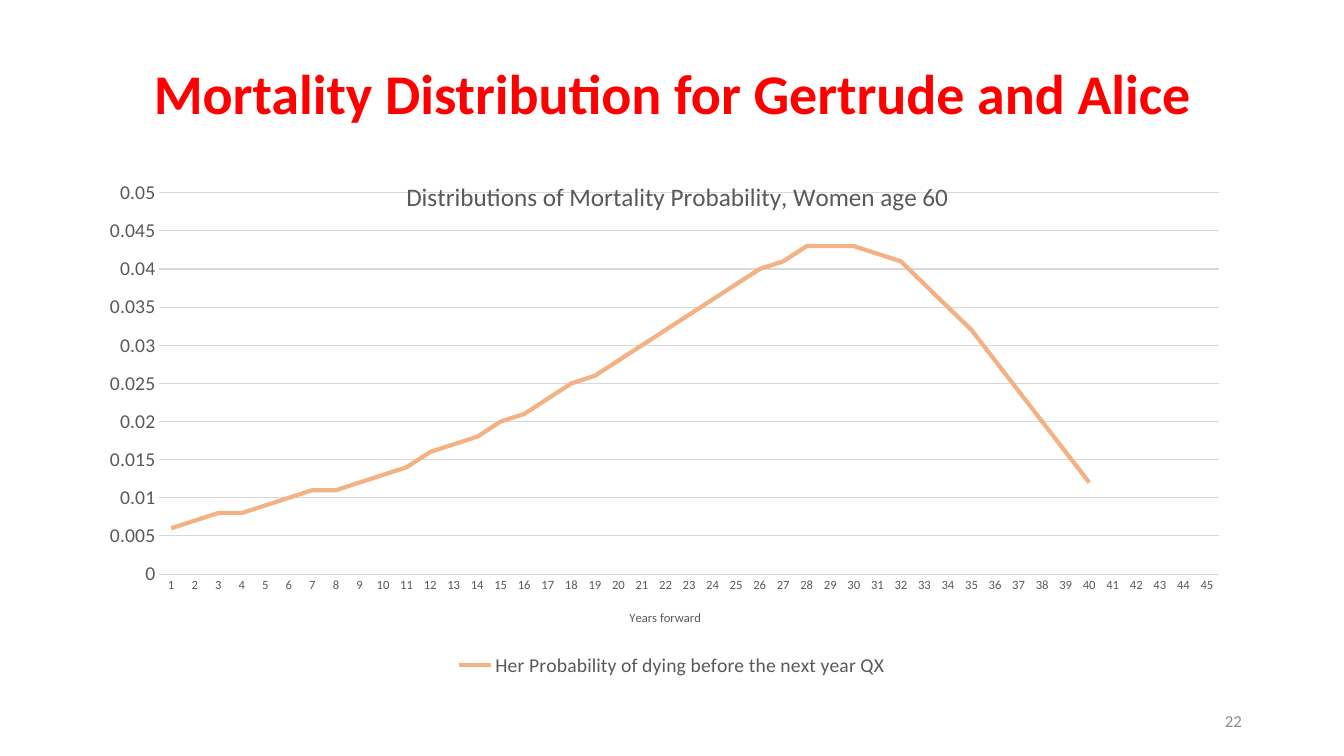
"""Build the mortality distribution slide with its line chart."""
from typing import NamedTuple, Union

from pptx import Presentation
from pptx.chart.axis import CategoryAxis, ValueAxis
from pptx.chart.data import CategoryChartData
from pptx.dml.color import RGBColor
from pptx.dml.line import LineFormat
from pptx.enum.chart import XL_CHART_TYPE, XL_LEGEND_POSITION, XL_MARKER_STYLE, XL_TICK_MARK
from pptx.enum.text import MSO_ANCHOR, MSO_AUTO_SIZE, PP_ALIGN
from pptx.oxml import parse_xml
from pptx.oxml.ns import nsdecls, qn
from pptx.text.text import Font, TextFrame
from pptx.util import Cm, Pt

COLORS = {
    "heading": "FF0000",
    "label": "595959",
    "grid": "D9D9D9",
    "curve": "F4B183",
    "page": "8C8C8C",
}
FONT = "Calibri"
YEARS = 45
PROBABILITIES = [
    0.006, 0.007, 0.008, 0.008, 0.009, 0.01, 0.011, 0.011, 0.012, 0.013,
    0.014, 0.016, 0.017, 0.018, 0.02, 0.021, 0.023, 0.025, 0.026, 0.028,
    0.03, 0.032, 0.034, 0.036, 0.038, 0.04, 0.041, 0.043, 0.043, 0.043,
    0.042, 0.041, 0.038, 0.035, 0.032, 0.028, 0.024, 0.02, 0.016, 0.012,
]


class Box(NamedTuple):
    """Left, top, width and height in centimetres."""

    left: float
    top: float
    width: float
    height: float

    def lengths(self) -> list[Cm]:
        """Return the four measures as slide lengths."""
        return [Cm(measure) for measure in self]


HEADING_BOX = Box(2.34, 1.02, 29.21, 2.84)
CHART_BOX = Box(2.74, 3.86, 28.4, 13.31)
PAGE_BOX = Box(23.93, 17.65, 7.62, 1.02)


def set_font(font: Font, size: float, color: str, bold: bool = False) -> None:
    """Apply the slide's typeface with a size and a colour."""
    font.name, font.size, font.bold = FONT, Pt(size), bold
    font.color.rgb = RGBColor.from_string(COLORS[color])


def write(frame: TextFrame, text: str, *, size: float, color: str, bold: bool = False,
          align: PP_ALIGN = PP_ALIGN.CENTER, spacing: float = 1.0) -> None:
    """Put one formatted paragraph in a text frame."""
    paragraph = frame.paragraphs[0]
    paragraph.alignment, paragraph.line_spacing = align, spacing
    run = paragraph.add_run()
    run.text = text
    set_font(run.font, size, color, bold)


def settle(frame: TextFrame) -> None:
    """Centre the text vertically, wrapped and at a fixed size."""
    frame.word_wrap = True
    frame.auto_size = MSO_AUTO_SIZE.NONE
    frame.vertical_anchor = MSO_ANCHOR.MIDDLE


def set_line(line: LineFormat, color: str, width: float) -> None:
    """Draw a solid line."""
    line.color.rgb = RGBColor.from_string(COLORS[color])
    line.width = Pt(width)


def place(parent, before: str, inner: bool = False, **fractions: float) -> None:
    """Give a chart part a manual layout in fractions of the chart."""
    for layout in parent.findall(qn("c:layout")):
        parent.remove(layout)
    target = '<c:layoutTarget val="inner"/>' if inner else ""
    modes = "".join(f'<c:{side}Mode val="edge"/>' for side in "xy")
    sizes = "".join(f'<c:{side} val="{value}"/>' for side, value in fractions.items())
    parent.find(qn(before)).addprevious(parse_xml(
        f'<c:layout {nsdecls("c")}><c:manualLayout>{target}{modes}{sizes}'
        "</c:manualLayout></c:layout>"))


def style_axis(axis: Union[CategoryAxis, ValueAxis], size: float) -> None:
    """Format the tick labels and remove the tick marks."""
    axis.major_tick_mark = axis.minor_tick_mark = XL_TICK_MARK.NONE
    set_font(axis.tick_labels.font, size, "label")


def add_mortality_chart(slide) -> None:
    """Add the line chart of yearly mortality probability."""
    mortality = CategoryChartData()
    mortality.categories = [str(year) for year in range(1, YEARS + 1)]
    unknown = [None] * (YEARS - len(PROBABILITIES))
    mortality.add_series("Her Probability of dying before the next year QX",
                         PROBABILITIES + unknown)
    chart = slide.shapes.add_chart(XL_CHART_TYPE.LINE, *CHART_BOX.lengths(), mortality).chart
    set_font(chart.font, 10, "label")

    write(chart.chart_title.text_frame, "Distributions of Mortality Probability, Women age 60",
          size=18, color="label")
    heading = chart.element.find(f"{qn('c:chart')}/{qn('c:title')}")
    place(heading, "c:overlay", x=0.26, y=0.04)
    heading.find(qn("c:overlay")).set("val", "1")

    years = chart.category_axis
    style_axis(years, 9)
    set_line(years.format.line, "grid", 0.75)
    write(years.axis_title.text_frame, "Years forward", size=9, color="label")
    place(chart.element.find(f".//{qn('c:catAx')}/{qn('c:title')}"), "c:overlay", x=0.46, y=0.86)

    probability = chart.value_axis
    style_axis(probability, 14)
    probability.minimum_scale, probability.maximum_scale = 0, 0.05
    probability.major_unit = 0.005
    probability.format.line.fill.background()
    set_line(probability.major_gridlines.format.line, "grid", 0.75)

    chart.has_legend = True
    chart.legend.position = XL_LEGEND_POSITION.BOTTOM
    chart.legend.include_in_layout = False
    set_font(chart.legend.font, 14, "label")

    plot = chart.plots[0]
    plot.vary_by_categories = False
    curve = plot.series[0]
    curve.smooth = False
    curve.marker.style = XL_MARKER_STYLE.NONE
    set_line(curve.format.line, "curve", 3)
    place(chart.element.find(f".//{qn('c:plotArea')}"), "c:lineChart", inner=True,
          x=0.045, y=0.075, w=0.94, h=0.722)


def main() -> None:
    """Build and save the slide."""
    deck = Presentation()
    deck.slide_width, deck.slide_height = Cm(33.87), Cm(19.05)
    slide = deck.slides.add_slide(deck.slide_layouts[5])

    heading = slide.shapes.title
    heading.left, heading.top, heading.width, heading.height = HEADING_BOX.lengths()
    settle(heading.text_frame)
    write(heading.text_frame, "Mortality Distribution for Gertrude and Alice",
          size=40, color="heading", bold=True, spacing=0.9)

    add_mortality_chart(slide)

    page = slide.shapes.add_textbox(*PAGE_BOX.lengths()).text_frame
    settle(page)
    write(page, "22", size=12, color="page", align=PP_ALIGN.RIGHT)
    deck.save("out.pptx")


if __name__ == "__main__":
    main()
